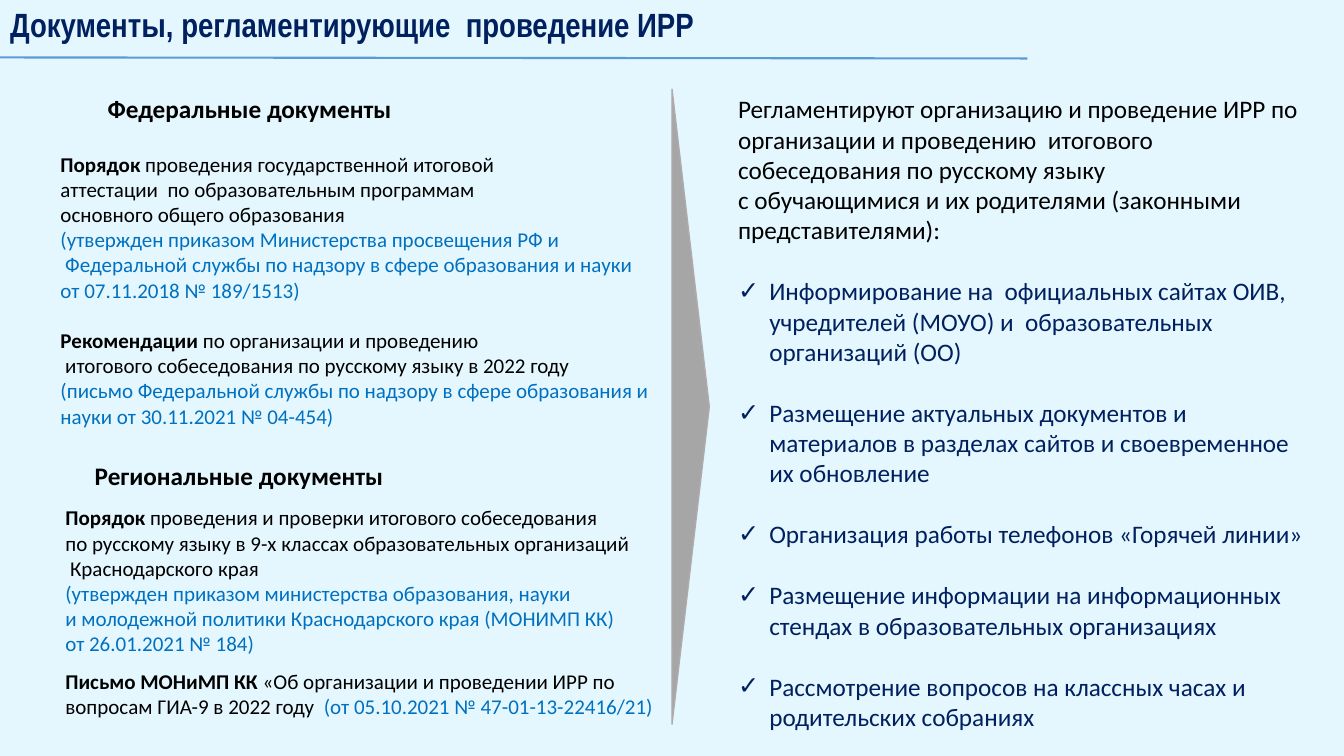
from dataclasses import dataclass

from lxml.etree import SubElement
from pptx import Presentation
from pptx.dml.color import RGBColor
from pptx.enum.shapes import MSO_CONNECTOR, MSO_SHAPE
from pptx.enum.text import MSO_ANCHOR, MSO_AUTO_SIZE as AutoSize, PP_ALIGN
from pptx.oxml.ns import qn
from pptx.util import Emu, Pt

PX = 9144  # EMU in one px, 100 px to the inch


@dataclass(frozen=True)
class Theme:
    background: str = "E5F7FE"
    ink: str = "000000"
    navy: str = "002060"
    reference: str = "0070C0"
    rule: str = "5B9BD5"
    arrow: str = "A6A6A6"
    arrow_edge: str = "AFABAB"
    title_font: str = "Arial Narrow"
    body_font: str = "Calibri"
    title_size: int = 24
    large: int = 18
    small: int = 15


THEME = Theme()


@dataclass(frozen=True)
class Span:
    text: str
    color: str = THEME.ink
    bold: bool = False


@dataclass(frozen=True)
class Para:
    spans: tuple[Span, ...]
    gap: int = 0  # points before the paragraph
    bullet: bool = False


@dataclass(frozen=True)
class Block:
    left: int
    top: int
    width: int
    height: int
    paras: tuple[Para, ...]
    size: int = THEME.small
    font: str = THEME.body_font
    wrap: bool = True


def px(length: int) -> Emu:
    return Emu(length * PX)


def rgb(color: str) -> RGBColor:
    return RGBColor.from_string(color)


def line(text: str, color: str = THEME.ink, bold: bool = False) -> Para:
    return Para((Span(text, color, bold),))


def reference(text: str) -> Para:
    return line(text, THEME.reference)


def lead(name: str, *rest: Span, gap: int = 0) -> Para:
    return Para((Span(name, bold=True), *rest), gap)


def task(text: str) -> Para:
    return Para((Span(text, THEME.navy),), gap=22, bullet=True)


def style_font(font, span: Span) -> None:
    font.bold = span.bold
    font.color.rgb = rgb(span.color)


def write_paragraph(paragraph, para: Para, block: Block) -> None:
    props = paragraph._p.get_or_add_pPr()
    indent = 31 * PX if para.bullet else 0
    props.set("marL", str(indent))
    props.set("indent", str(-indent))
    if para.bullet:
        SubElement(props, qn("a:buChar")).set("char", "✓")
    else:
        SubElement(props, qn("a:buNone"))
    paragraph.alignment = PP_ALIGN.LEFT
    paragraph.space_before = Pt(para.gap)
    paragraph.font.name = block.font
    paragraph.font.size = Pt(block.size)
    if len(para.spans) == 1:
        style_font(paragraph.font, para.spans[0])
    for span in para.spans:
        run = paragraph.add_run()
        run.text = span.text
        if len(para.spans) > 1:
            style_font(run.font, span)


def fill_block(shape, block: Block) -> None:
    shape.left, shape.top = px(block.left), px(block.top)
    shape.width, shape.height = px(block.width), px(block.height)
    frame = shape.text_frame
    frame.word_wrap = block.wrap
    frame.auto_size = AutoSize.SHAPE_TO_FIT_TEXT
    frame.vertical_anchor = MSO_ANCHOR.TOP
    for index, para in enumerate(block.paras):
        paragraph = frame.add_paragraph() if index else frame.paragraphs[0]
        write_paragraph(paragraph, para, block)


def heading(left: int, top: int, width: int, text: str) -> Block:
    return Block(left, top, width, 40, (line(text, bold=True),), THEME.large, wrap=False)


TITLE = Block(0, -1, 1179, 50, (
    line("Документы, регламентирующие  проведение ИРР", THEME.navy, True),
), THEME.title_size, THEME.title_font)

FEDERAL = Block(50, 145, 617, 288, (
    lead("Порядок ", Span("проведения государственной итоговой")),
    line("аттестации  по образовательным программам"),
    line("основного общего образования"),
    reference("(утвержден приказом Министерства просвещения РФ и"),
    reference(" Федеральной службы по надзору в сфере образования и науки"),
    reference("от 07.11.2018 № 189/1513)"),
    lead("Рекомендации", Span(" по организации и проведению"), gap=18),
    line(" итогового собеседования по русскому языку в 2022 году"),
    reference("(письмо Федеральной службы по надзору в сфере образования и "
              "науки от 30.11.2021 № 04-454)"),
))

DUTIES = Block(722, 88, 584, 646, (
    line("Регламентируют организацию и проведение ИРР по организации и "
         "проведению  итогового собеседования по русскому языку"),
    line("с обучающимися и их родителями (законными представителями):"),
    task("Информирование на  официальных сайтах ОИВ, учредителей (МОУО) и  "
         "образовательных организаций (ОО)"),
    task("Размещение актуальных документов и материалов в разделах сайтов и "
         "своевременное их обновление"),
    task("Организация работы телефонов «Горячей линии»"),
    task("Размещение информации на информационных стендах в образовательных "
         "организациях"),
    task("Рассмотрение вопросов на классных часах и родительских собраниях"),
), THEME.large)

TEXT_BOXES = (
    heading(97, 88, 304, "Федеральные документы"),
    heading(84, 452, 310, "Региональные документы"),
    Block(55, 496, 584, 162, (
        lead("Порядок ", Span("проведения и проверки итогового собеседования")),
        line("по русскому языку в 9-х классах образовательных организаций"),
        line(" Краснодарского края"),
        reference("(утвержден приказом министерства образования, науки"),
        reference("и молодежной политики Краснодарского края (МОНИМП КК)"),
        reference("от 26.01.2021 № 184)"),
    ), wrap=False),
    Block(55, 658, 614, 61, (
        lead("Письмо МОНиМП КК ",
             Span("«Об организации и проведении ИРР по вопросам ГИА-9 в 2022 году  "),
             Span("(от 05.10.2021 № 47-01-13-22416/21)", THEME.reference)),
    )),
)


def add_title_rule(slide) -> None:
    rule = slide.shapes.add_connector(
        MSO_CONNECTOR.STRAIGHT, px(1019), px(58), px(0), px(57))
    rule.line.color.rgb = rgb(THEME.rule)
    rule.line.width = Pt(1.5)
    SubElement(rule._element.spPr, qn("a:effectLst"))


def add_divider_arrow(slide) -> None:
    arrow = slide.shapes.add_shape(
        MSO_SHAPE.ISOSCELES_TRIANGLE, px(370), px(385), px(630), px(37))
    arrow.rotation = 90
    arrow.shadow.inherit = False
    arrow.fill.solid()
    arrow.fill.fore_color.rgb = rgb(THEME.arrow)
    arrow.line.color.rgb = rgb(THEME.arrow_edge)
    arrow.line.width = Pt(1)


def main() -> None:
    deck = Presentation()
    deck.slide_width, deck.slide_height = px(1333), px(750)
    slide = deck.slides.add_slide(deck.slide_layouts.get_by_name("Two Content"))
    slide.background.fill.solid()
    slide.background.fill.fore_color.rgb = rgb(THEME.background)

    # Title and the two main columns
    for placeholder, block in zip(slide.placeholders, (TITLE, FEDERAL, DUTIES)):
        fill_block(placeholder, block)

    # Headings and regional documents
    for block in TEXT_BOXES:
        box = slide.shapes.add_textbox(0, 0, 0, 0)
        fill_block(box, block)

    # Rule under the title, arrow between the columns
    add_title_rule(slide)
    add_divider_arrow(slide)
    deck.save("out.pptx")


if __name__ == "__main__":
    main()
